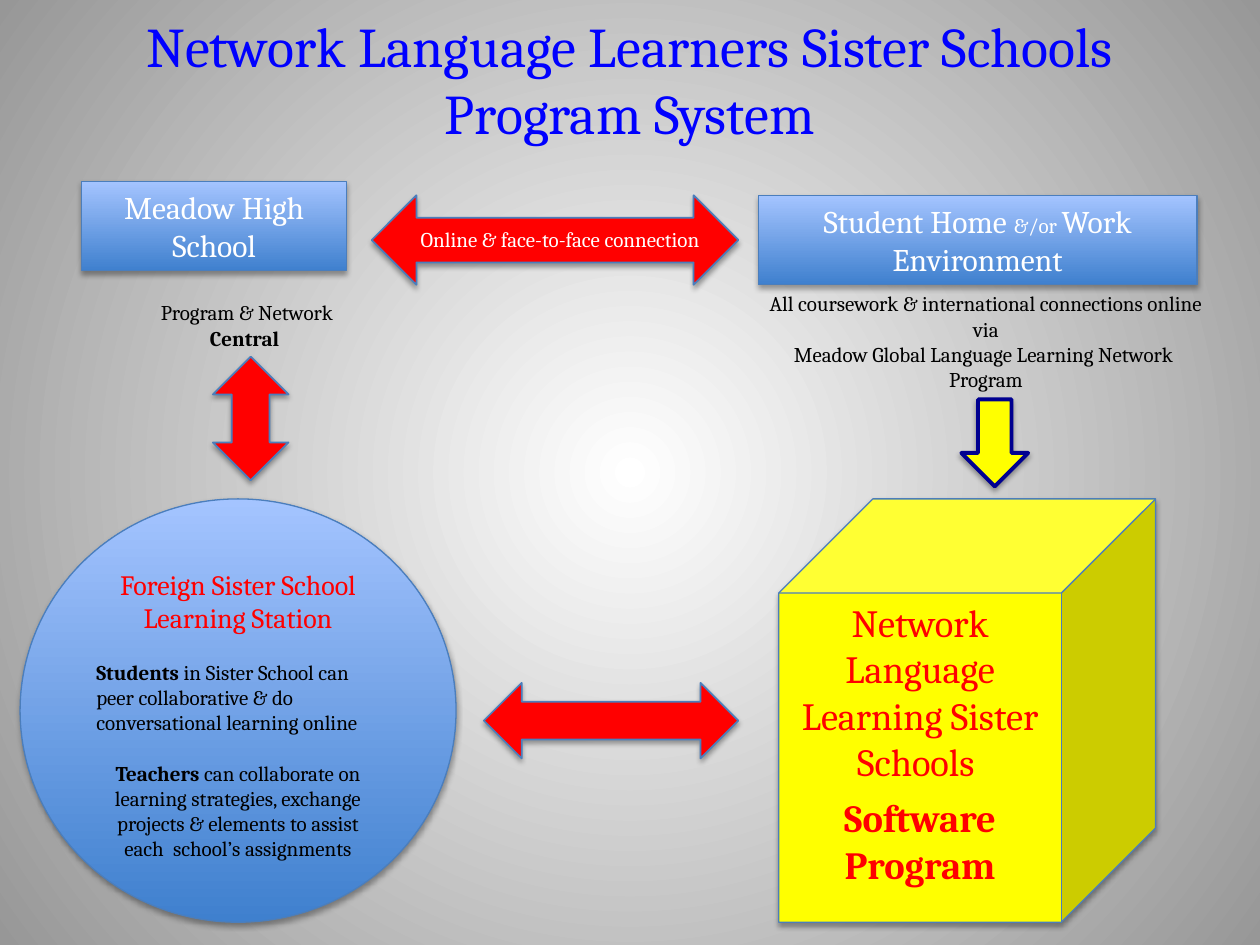
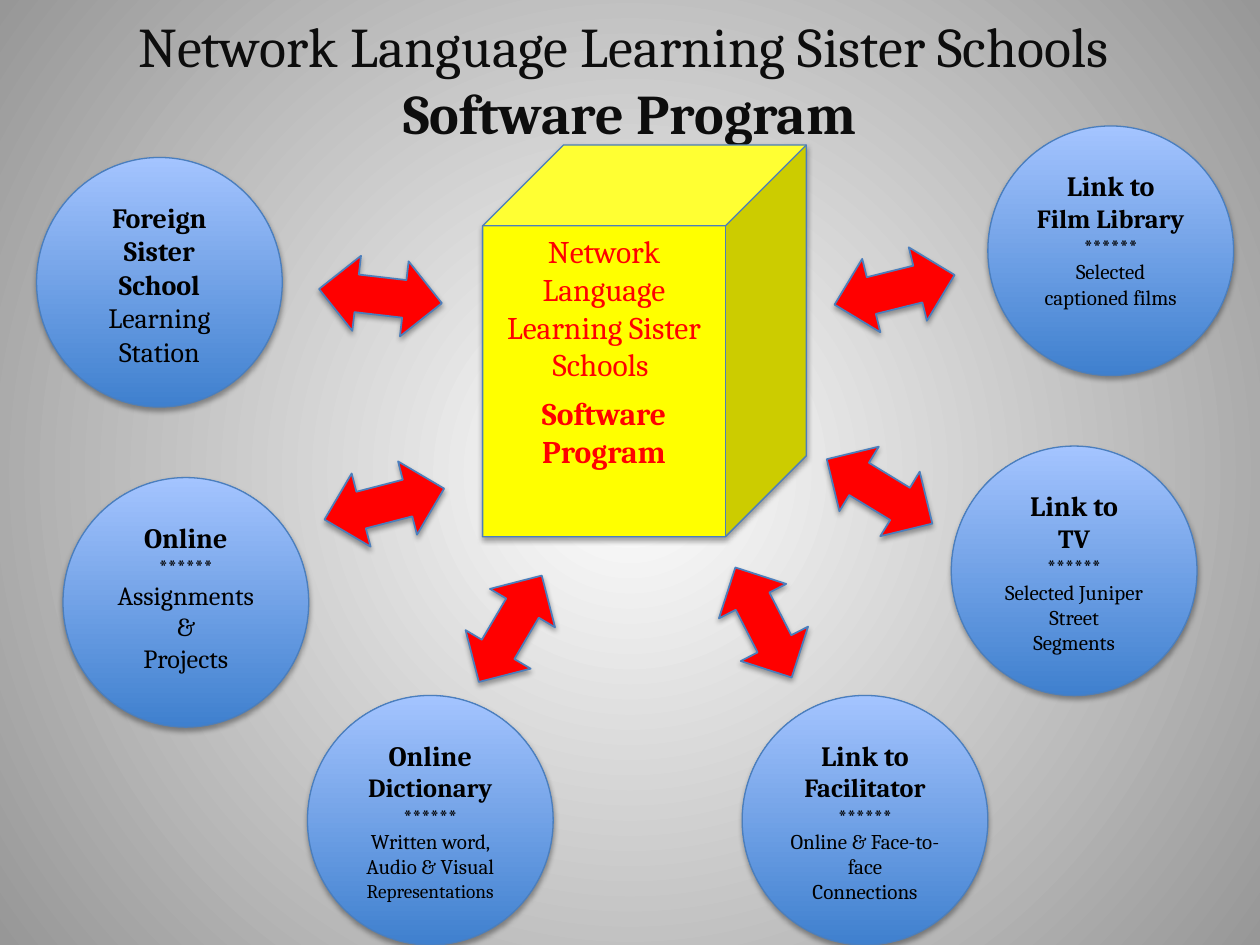
from pptx import Presentation
from pptx.dml.color import RGBColor
from pptx.enum.shapes import MSO_SHAPE
from pptx.enum.text import MSO_ANCHOR, PP_ALIGN
from pptx.oxml import parse_xml
from pptx.oxml.ns import nsdecls, qn
from pptx.util import Pt

# Shared look
FONT = "Cambria"
BLACK, WHITE, RED, YELLOW = "000000", "FFFFFF", "FF0000", "FFFF00"
TITLE_BLUE, TITLE_BLACK = "0000FF", "0D0D0D"
OUTLINE, NAVY = "4B7EBC", "000090"
BLUE_GRADIENT = ("3F80CE", "A4C4FF")
PAGE_GRADIENT = ("FFFFFF", "979797")
TITLE_BOX = (36, 0, 648, 90)
BLANK_LINE = 14.4
BOLD = {"bold": True}


def line(*runs, size=12, color=BLACK, bold=False, align=PP_ALIGN.CENTER, before=0, after=0):
    """One paragraph; a run is a string or (string, font settings that differ)."""
    return dict(runs=runs, font=dict(size=size, color=color, bold=bold),
                align=align, before=before, after=after)


def link_lines(first, second, *details):
    return [line(first, size=16, bold=True), line(second, size=15, bold=True),
            line("******"), *details]


def cube_lines(size):
    return [line("Network Language Learning Sister Schools ", size=size, color=RED, after=6),
            line("Software Program", size=size, color=RED, bold=True, after=6)]


# Slide 1: program system
SYSTEM_TITLE = [line("Network Language Learners Sister Schools Program System",
                     size=32, color=TITLE_BLUE)]
PLACES = [
    ((46.8, 103.7, 151.2, 51.1), [line("Meadow High School", size=18, color=WHITE)]),
    ((433.4, 111.6, 250.6, 51.1), [
        line("Student Home ", ("&/or ", {"size": 12}), "Work", size=18, color=WHITE),
        line("Environment", size=18, color=WHITE)]),
]
CAPTIONS = [
    ((69.1, 167.8, 144, 36), [line("Program & Network ", ("Central ", BOLD))]),
    ((421.9, 162.7, 283, 65.5), [
        line("All coursework & international connections online"),
        line("via"),
        line("Meadow Global Language Learning Network "),
        line("Program")]),
]
ARROW_LABEL = ((233.3, 126, 190.1, 21.6), [
    line("Online & face-to-face connection", color=WHITE, align=PP_ALIGN.LEFT)])
STATION = ((11.5, 285.1, 249.1, 241.9), [
    line("Foreign Sister School Learning Station", size=16, color=RED),
    line(("Students", BOLD),
         " in Sister School can peer collaborative & do conversational learning online",
         align=PP_ALIGN.LEFT, before=BLANK_LINE),
    line(("Teachers", BOLD),
         " can collaborate on learning strategies, exchange projects & elements"
         " to assist each  school’s assignments", before=BLANK_LINE)])
SYSTEM_ARROWS = [  # box, rotation
    ((121.7, 203.8, 43.2, 70.6), 0),
    ((291.6, 32.4, 51.1, 209.5), 270),
    ((327.6, 339.1, 43.2, 145.4), 270),
]
DOWN_ARROW = (543.6, 234, 49.7, 38.2)
SYSTEM_CUBE = (445, 285.1, 215.3, 241.9)

# Slide 2: software program
SOFTWARE_TITLE = [line("Network Language Learning Sister Schools ", size=32, color=TITLE_BLACK),
                  line("Software Program", size=32, color=TITLE_BLACK, bold=True)]
SOFTWARE_CUBE = (275.8, 82.8, 185, 223.9)
CIRCLE_SIZE = (140.4, 142.6)
LINK_ARROW_SIZE = (43.2, 70.6)
LINKS = [  # circle corner, arrow corner, arrow rotation, text
    ((20.9, 90), (195.8, 133.9), 276.6,
     [line(("Foreign Sister School ", BOLD), "Learning Station", size=16)]),
    ((36, 272.9), (198, 252.7), 255.5,
     [line("Online", size=16, bold=True), line("******"),
      *(line(word, size=15) for word in ("Assignments", "&", "Projects"))]),
    ((175.7, 397.4), (270, 324), 210.6,
     link_lines("Online", "Dictionary", line("Written word, Audio & Visual"),
                line("Representations", size=11))),
    ((424.1, 397.4), (414.7, 320.4), 332.9,
     link_lines("Link to", "Facilitator", line("Online & Face-to-face"), line("Connections"))),
    ((543.6, 254.9), (481, 245.5), 301.4,
     link_lines("Link to", "TV", line("Selected Juniper Street"), line("Segments"))),
    ((564.5, 72), (489.6, 130.3), 256.1,
     link_lines("Link to", "Film Library", line("Selected captioned films"))),
]


def rgb(value):
    return RGBColor.from_string(value)


def set_font(font, size=None, color=None, bold=None):
    if size is not None:
        font.size = Pt(size)
    if color is not None:
        font.color.rgb = rgb(color)
    if bold is not None:
        font.bold = bold


def write(shape, lines, anchor=MSO_ANCHOR.TOP):
    frame = shape.text_frame
    frame.word_wrap = True
    frame.vertical_anchor = anchor
    for index, item in enumerate(lines):
        paragraph = frame.add_paragraph() if index else frame.paragraphs[0]
        paragraph.alignment = item["align"]
        paragraph.space_before, paragraph.space_after = Pt(item["before"]), Pt(item["after"])
        paragraph.font.name = FONT
        set_font(paragraph.font, **item["font"])
        for part in item["runs"]:
            text, changes = (part, {}) if isinstance(part, str) else part
            run = paragraph.add_run()
            run.text = text
            set_font(run.font, **changes)


def set_gradient(fill, colors):
    fill.gradient()
    for stop, color in zip(fill.gradient_stops, colors):
        stop.color.rgb = rgb(color)


def add_text(slide, box, lines, anchor=MSO_ANCHOR.TOP):
    write(slide.shapes.add_textbox(*map(Pt, box)), lines, anchor)


def add_figure(slide, kind, box, fill=BLUE_GRADIENT, outline=OUTLINE, width=0.75,
               rotation=0, lines=(), anchor=MSO_ANCHOR.TOP):
    shape = slide.shapes.add_shape(kind, *map(Pt, box))
    shape.rotation = rotation
    if isinstance(fill, str):
        shape.fill.solid()
        shape.fill.fore_color.rgb = rgb(fill)
    else:
        set_gradient(shape.fill, fill)
        shape.fill.gradient_angle = 90
    shape.line.color.rgb = rgb(outline)
    shape.line.width = Pt(width)
    # Soft shadow straight below
    shape.shadow.inherit = False
    shape.element.spPr.find(qn("a:effectLst")).append(parse_xml(
        f'<a:outerShdw {nsdecls("a")} blurRad="{Pt(3.1)}" dist="{Pt(1.8)}" dir="5400000"'
        ' rotWithShape="0"><a:srgbClr val="000000"><a:alpha val="35000"/></a:srgbClr>'
        '</a:outerShdw>'))
    write(shape, lines, anchor)


def add_double_arrow(slide, box, rotation):
    add_figure(slide, MSO_SHAPE.UP_DOWN_ARROW, box, RED, width=1, rotation=rotation)


def add_page(presentation, title):
    slide = presentation.slides.add_slide(presentation.slide_layouts[6])
    set_gradient(slide.background.fill, PAGE_GRADIENT)
    # Radial gradient from the centre
    linear = slide.element.find(".//" + qn("a:lin"))
    linear.getparent().replace(linear, parse_xml(
        f'<a:path {nsdecls("a")} path="circle">'
        '<a:fillToRect l="50000" t="50000" r="50000" b="50000"/></a:path>'))
    add_text(slide, TITLE_BOX, title, MSO_ANCHOR.MIDDLE)
    return slide


def build_system(presentation):
    slide = add_page(presentation, SYSTEM_TITLE)
    for box, lines in PLACES:
        add_figure(slide, MSO_SHAPE.RECTANGLE, box, lines=lines, anchor=MSO_ANCHOR.MIDDLE)
    for box, lines in CAPTIONS:
        add_text(slide, box, lines)
    add_figure(slide, MSO_SHAPE.RIGHT_ARROW, DOWN_ARROW, YELLOW, NAVY, 2.25, rotation=90)
    station_box, station_lines = STATION
    add_figure(slide, MSO_SHAPE.OVAL, station_box, lines=station_lines)
    for box, rotation in SYSTEM_ARROWS:
        add_double_arrow(slide, box, rotation)
    add_figure(slide, MSO_SHAPE.CUBE, SYSTEM_CUBE, YELLOW, lines=cube_lines(22))
    add_text(slide, *ARROW_LABEL)


def build_software(presentation):
    slide = add_page(presentation, SOFTWARE_TITLE)
    add_figure(slide, MSO_SHAPE.CUBE, SOFTWARE_CUBE, YELLOW, lines=cube_lines(18))
    for circle_corner, arrow_corner, rotation, lines in LINKS:
        add_figure(slide, MSO_SHAPE.OVAL, circle_corner + CIRCLE_SIZE, lines=lines)
        add_double_arrow(slide, arrow_corner + LINK_ARROW_SIZE, rotation)


def main():
    presentation = Presentation()
    presentation.slide_width, presentation.slide_height = Pt(720), Pt(540)
    build_system(presentation)
    build_software(presentation)
    presentation.save("out.pptx")


if __name__ == "__main__":
    main()
